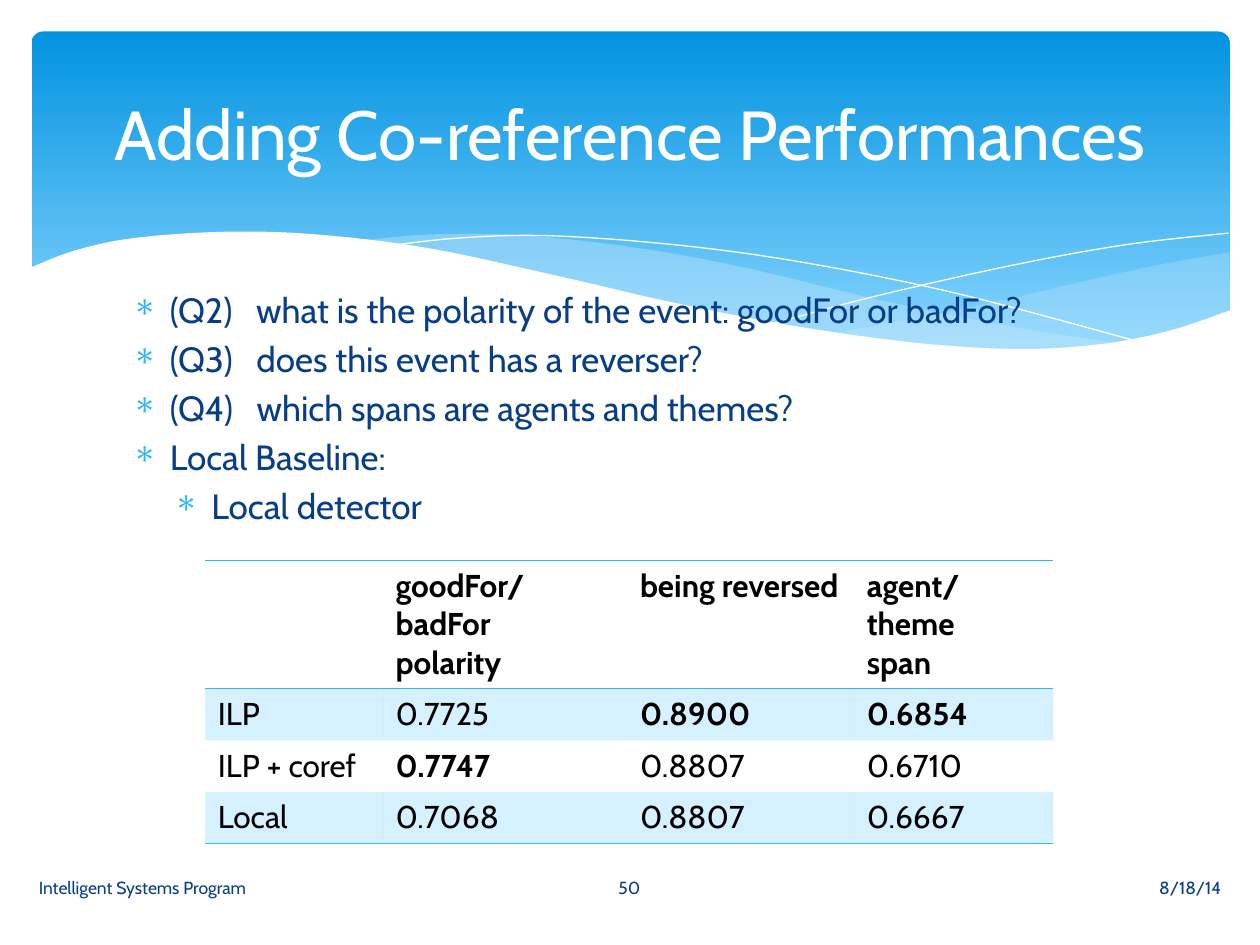
from dataclasses import dataclass

from lxml.etree import SubElement
from pptx import Presentation
from pptx.dml.color import RGBColor
from pptx.enum.shapes import MSO_SHAPE
from pptx.enum.text import MSO_ANCHOR, MSO_AUTO_SIZE, PP_ALIGN
from pptx.oxml.ns import qn
from pptx.util import Inches, Pt

COLUMNS, ROWS = 100, 75


@dataclass(frozen=True)
class Theme:
    """Colours, font and type sizes of the deck."""
    font: str = "Cabin"
    navy: str = "073E87"
    sky: str = "31B6FD"
    mist: str = "C6E7FC"
    white: str = "FFFFFF"
    black: str = "000000"
    panel_top: str = "0293E0"
    panel_bottom: str = "83D3FE"
    title: float = 39.6
    body: int = 20
    table: int = 18
    footer: int = 10


def write(paragraph, text, theme, size, color, bold=False, align=None, spacing=None):
    """Add one formatted run to a paragraph."""
    run = paragraph.add_run()
    run.text = text
    run.font.name, run.font.size, run.font.bold = theme.font, Pt(size), bold
    run.font.color.rgb = RGBColor.from_string(color)
    if align is not None:
        paragraph.alignment = align
    if spacing:
        run._r.get_or_add_rPr().set("spc", str(spacing * 100))


def smooth(anchors, steps=6):
    """Sample a Catmull-Rom curve through the anchors."""
    padded = [anchors[0], *anchors, anchors[-1]]
    curve = [anchors[0]]
    for a, b, c, d in zip(padded, padded[1:], padded[2:], padded[3:]):
        for step in range(1, steps + 1):
            t = step / steps
            curve.append(tuple(
                (2 * q + (r - p) * t + (2 * p - 5 * q + 4 * r - s) * t ** 2
                 + (3 * q - p - 3 * r + s) * t ** 3) / 2
                for p, q, r, s in zip(a, b, c, d)))
    return curve


def tint(properties, color, opacity):
    """Make the given colour see-through inside a fill."""
    for node in properties.iter(qn("a:srgbClr")):
        if node.get("val") == color:
            SubElement(node, qn("a:alpha"), val=str(opacity * 1000))


class Page:
    """Holds the theme and current slide and draws each kind of element."""

    def __init__(self, deck, theme):
        """Start a title-only slide."""
        self.theme = theme
        self.slide = deck.slides.add_slide(deck.slide_layouts[5])
        self.shapes = self.slide.shapes
        self.column, self.row = deck.slide_width / COLUMNS, deck.slide_height / ROWS

    def place(self, left, top, width, height):
        """Turn grid columns and rows into lengths."""
        return (round(left * self.column), round(top * self.row),
                round(width * self.column), round(height * self.row))

    def panel(self, box, roundness):
        """Draw the gradient header panel."""
        panel = self.shapes.add_shape(MSO_SHAPE.ROUNDED_RECTANGLE, *self.place(*box))
        panel.adjustments[0] = roundness
        panel.shadow.inherit = False
        panel.line.fill.background()
        panel.fill.gradient()
        panel.fill.gradient_angle = 270
        stops = zip(panel.fill.gradient_stops, (0, 0.9),
                    (self.theme.panel_top, self.theme.panel_bottom))
        for stop, position, color in stops:
            stop.position, stop.color.rgb = position, RGBColor.from_string(color)

    def wave(self, *edges, fill=None, opacity=100):
        """Draw smooth edges as a filled area, or as a hairline without a fill."""
        points = [(round(x * self.column), round(y * self.row))
                  for edge in edges for x, y in smooth(edge)]
        builder = self.shapes.build_freeform(*points[0])
        builder.add_line_segments(points[1:], close=fill is not None)
        wave = builder.convert_to_shape()
        wave.shadow.inherit = False
        if fill:
            wave.fill.solid()
            wave.fill.fore_color.rgb = RGBColor.from_string(fill)
            wave.line.fill.background()
            if opacity < 100:
                tint(wave._element.spPr, fill, opacity)
        else:
            wave.fill.background()
            wave.line.color.rgb = RGBColor.from_string(self.theme.white)
            wave.line.width = Pt(0)

    def title(self, text, box):
        """Move and format the title placeholder above the panel."""
        title = self.shapes.title
        title.left, title.top, title.width, title.height = self.place(*box)
        frame = title.text_frame
        frame.vertical_anchor, frame.auto_size = MSO_ANCHOR.MIDDLE, MSO_AUTO_SIZE.NONE
        write(frame.paragraphs[0], text, self.theme, self.theme.title,
              self.theme.white, align=PP_ALIGN.CENTER)
        title._element.getparent().append(title._element)

    def text_frame(self, box, anchor):
        """Add a wrapping text box and return its frame."""
        frame = self.shapes.add_textbox(*self.place(*box)).text_frame
        frame.word_wrap, frame.vertical_anchor = True, anchor
        return frame

    def bullets(self, items, box):
        """List (level, label, text) items with star bullets."""
        frame = self.text_frame(box, MSO_ANCHOR.TOP)
        style = dict(theme=self.theme, size=self.theme.body, color=self.theme.navy)
        for index, (level, label, text) in enumerate(items):
            paragraph = frame.add_paragraph() if index else frame.paragraphs[0]
            paragraph.level, paragraph.space_before = level, Pt(self.theme.body * 0.2)
            properties = paragraph._p.get_or_add_pPr()
            properties.set("marL", str(Inches(0.3 + 0.33 * level)))
            properties.set("indent", str(Inches(-0.3)))
            color = SubElement(properties, qn("a:buClr"))
            SubElement(color, qn("a:srgbClr"), val=self.theme.sky)
            SubElement(properties, qn("a:buChar"), char="∗")
            if label:
                write(paragraph, label, **style)
                write(paragraph, " ", spacing=9, **style)
            write(paragraph, text, **style)

    def footer(self, text, box, align):
        """Write one footer entry."""
        frame = self.text_frame(box, MSO_ANCHOR.MIDDLE)
        write(frame.paragraphs[0], text, self.theme, self.theme.footer,
              self.theme.navy, align=align)

    def rule(self, cell, side):
        """Put a thin rule on one side of a cell."""
        border = SubElement(cell._tc.get_or_add_tcPr(), qn(f"a:{side}"), w=str(Pt(1)))
        fill = SubElement(border, qn("a:solidFill"))
        SubElement(fill, qn("a:srgbClr"), val=self.theme.sky)
        border.getparent().insert(0, border)

    def table(self, records, best, left, top, widths, height):
        """Tabulate records, with a bold header and bold best scores."""
        box = self.place(left, top, sum(widths), height * len(records))
        table = self.shapes.add_table(len(records), len(widths), *box).table
        style = table._tbl.tblPr.find(qn("a:tableStyleId"))
        style.text = "{2D5ABB26-0587-4C30-8999-92F81FD0307C}"
        for column, width in zip(table.columns, widths):
            column.width = round(width * self.column)
        for r, record in enumerate(records):
            for c, text in enumerate(record):
                cell = table.cell(r, c)
                for index, line in enumerate(text.split("\n")):
                    frame = cell.text_frame
                    paragraph = frame.add_paragraph() if index else frame.paragraphs[0]
                    write(paragraph, line, self.theme, self.theme.table,
                          self.theme.black, bold=r == 0 or (r, c) in best)
                if r % 2:
                    cell.fill.solid()
                    cell.fill.fore_color.rgb = RGBColor.from_string(self.theme.sky)
                    tint(cell._tc.tcPr, self.theme.sky, 20)
                else:
                    cell.fill.background()
                if r in (0, len(records) - 1):
                    self.rule(cell, "lnB")
                if r == 0:
                    self.rule(cell, "lnT")


def main():
    """Build and save the slide."""
    deck = Presentation()
    deck.slide_width, deck.slide_height = Inches(10), Inches(7.5)
    theme = Theme()
    page = Page(deck, theme)

    page.panel((2.5, 2.5, 95.1, 27), 0.034)
    page.wave([(97.6, 20), (92.1, 21), (86.1, 22.3), (77.9, 24.2), (66.1, 26.5)],
              [(66.1, 26.5), (73.2, 27.4), (81.4, 27.8), (88.1, 27.3), (93.5, 26.2),
               (97.6, 24.7)], fill=theme.mist, opacity=29)
    page.wave([(89.3, 27.3), (80.7, 26), (70.6, 24), (59.8, 21.4), (51.4, 19.8),
               (42, 18.7), (34.4, 18.6), (28.6, 19.1)],
              [(28.6, 19.1), (36.2, 20.3), (44.9, 22.2), (56.6, 24.8), (66.5, 26.6),
               (76.1, 27.7), (83.8, 27.8), (89.3, 27.3)], fill=theme.mist, opacity=40)
    page.wave([(30.9, 19.5), (36.3, 18.9), (43.3, 18.7), (53.3, 19.4), (63.6, 20.8),
               (76, 23.3), (90.7, 27.2)])
    page.wave([(61.3, 25.7), (69.5, 23.5), (80.6, 21), (89.5, 19.4), (97.5, 18.5)])
    page.wave([(97.7, 24.6), (93, 26.2), (87.5, 27.3), (80.9, 27.7), (72.6, 27.2),
               (62.6, 25.8), (52.9, 23.9), (44.7, 22), (34, 19.7), (25, 18.6),
               (17.7, 18.4), (10.6, 18.9), (5.9, 19.9), (2.3, 21.3)],
              [(2.3, 32.9), (97.7, 32.9)], fill=theme.white)

    page.bullets([
        (0, "(Q2)", "what is the polarity of the event: goodFor or badFor?"),
        (0, "(Q3)", "does this event has a reverser?"),
        (0, "(Q4)", "which spans are agents and themes?"),
        (0, "", "Local Baseline:"),
        (1, "", "Local detector"),
    ], (9.5, 22.4, 81, 37.7))
    page.footer("8/18/14", (56.5, 68.4, 41.4, 4), PP_ALIGN.RIGHT)
    page.footer("Intelligent Systems Program", (2.1, 68.4, 41.4, 4), PP_ALIGN.LEFT)
    page.footer("50", (43.6, 68.4, 12.7, 4), PP_ALIGN.CENTER)
    page.title("Adding Co-reference Performances", (5, 3.7, 90, 13.7))
    page.table([
        ("", "goodFor/badFor\npolarity", "being reversed", "agent/theme\nspan"),
        ("ILP", "0.7725", "0.8900", "0.6854"),
        ("ILP + coref", "0.7747", "0.8807", "0.6710"),
        ("Local", "0.7068", "0.8807", "0.6667"),
    ], {(1, 2), (1, 3), (2, 1)}, 16.3, 44.5, (14.1, 19.4, 18, 15.8), 4.1)
    deck.save("out.pptx")


if __name__ == "__main__":
    main()
